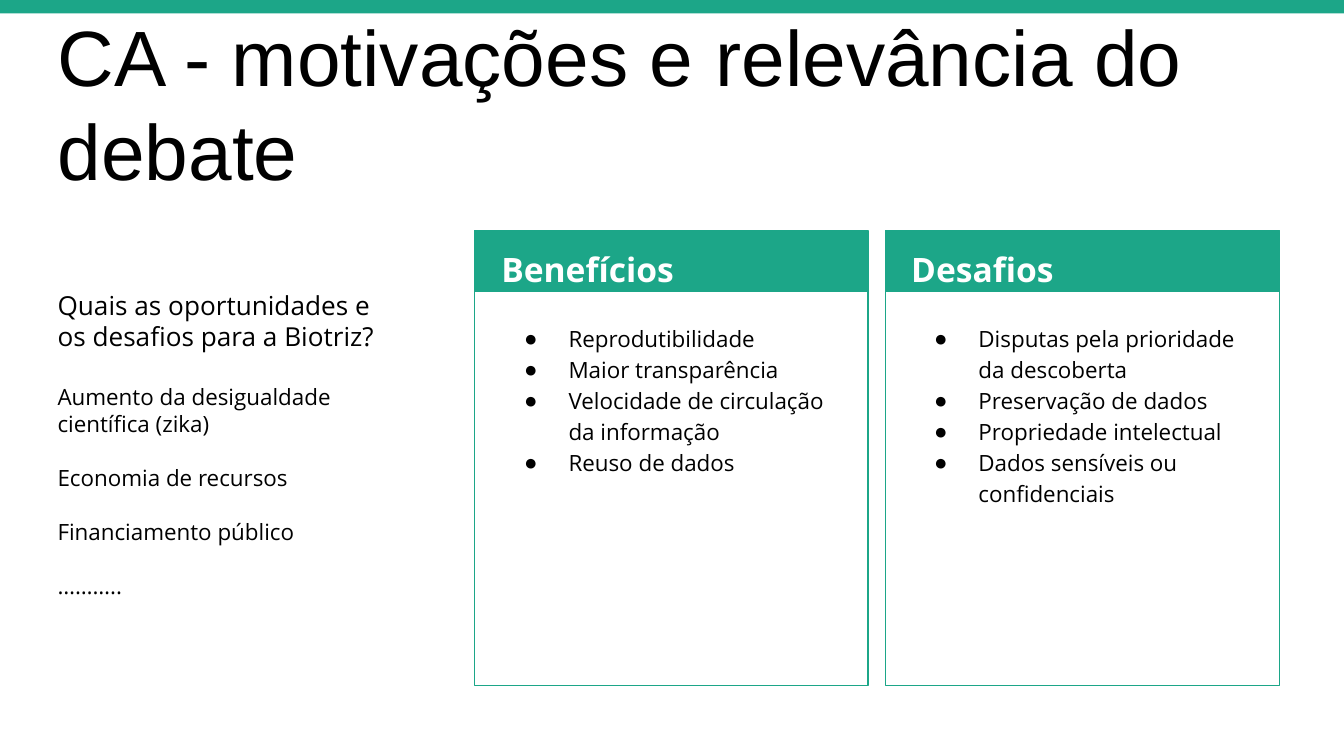
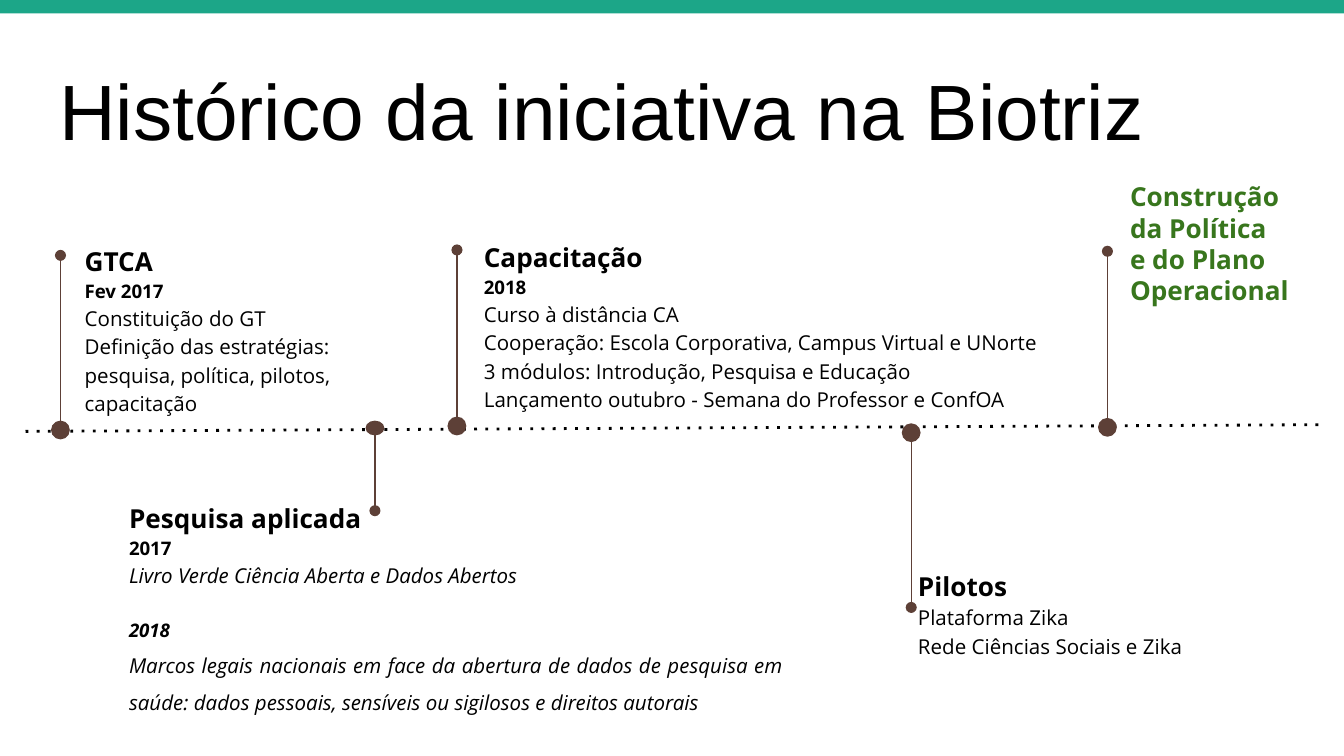
from copy import deepcopy

from lxml.etree import SubElement
from pptx import Presentation
from pptx.dml.color import RGBColor
from pptx.enum.shapes import MSO_CONNECTOR as Connector, MSO_SHAPE as Shape
from pptx.enum.text import MSO_ANCHOR as Anchor, MSO_AUTO_SIZE as AutoSize, PP_ALIGN as Align
from pptx.oxml.ns import qn
from pptx.util import Inches, Pt

GREEN, BROWN, BLACK, WHITE, DARK_GREEN = "1CA688", "5D4037", "000000", "FFFFFF", "38761D"

# Paragraph styles
TITLE = dict(size=42, font="Arial", spacing=1)
CARD_HEAD = dict(size=18, bold=True, color=WHITE)
CARD_ITEM = dict(size=12, bullet=True)
QUESTION = dict(size=14, spacing=1, after=17)
ANSWER = dict(size=12, spacing=1, after=14.5)
HEAD = dict(size=14, bold=True)
DATE = dict(size=10, bold=True)
PLAIN = dict(size=11)
GOAL = dict(size=14, bold=True, color=DARK_GREEN, spacing=1)

# Slide 1
DEBATE_TITLE = "CA - motivações e relevância do debate"
DEBATE_NOTES = [
    ("Quais as oportunidades e os desafios para a Biotriz?", QUESTION),
    ("Aumento da desigualdade científica (zika)", ANSWER),
    ("Economia de recursos", ANSWER),
    ("Financiamento público", ANSWER),
    ("………..", ANSWER),
]
CARDS = [
    ("Benefícios", ["Reprodutibilidade", "Maior transparência",
                    "Velocidade de circulação da informação", "Reuso de dados"]),
    ("Desafios", ["Disputas pela prioridade da descoberta", "Preservação de dados",
                  "Propriedade intelectual", "Dados sensíveis ou confidenciais"]),
]
CARD_LEFT, CARD_TOP, CARD_STEP = 3.53, 1.72, 3.06
CARD_WIDTH, CARD_HEIGHT, HEADER_HEIGHT = 2.93, 3.38, 0.45
CARD_TEXT_LEFT, CARD_TEXT_STEP, CARD_TEXT_WIDTH = 3.63, 3.05, 2.72

# Slide 2
HISTORY_TITLE = "Histórico da iniciativa na Biotriz"
EVENTS = [
    ((0.53, 1.69, 2.34, 1.2), [
        ("GTCA", HEAD),
        ("Fev 2017", DATE),
        ("Constituição do GT \vDefinição das estratégias: pesquisa, política, pilotos, "
         "capacitação", PLAIN),
    ]),
    ((0.86, 3.6, 5.07, 1.46), [
        ("Pesquisa aplicada", HEAD),
        ("2017", DATE),
        ("Livro Verde Ciência Aberta e Dados Abertos", dict(PLAIN, italic=True, after=15)),
        ("2018", dict(DATE, italic=True)),
        ("Marcos legais nacionais em face da abertura de dados de pesquisa em saúde: "
         "dados pessoais, sensíveis ou sigilosos e direitos autorais",
         dict(PLAIN, italic=True, spacing=1.5, align=Align.JUSTIFY)),
    ]),
    ((6.73, 4.11, 2.2, 1.2), [
        ("Pilotos", HEAD),
        ("Plataforma Zika", PLAIN),
        ("Rede Ciências Sociais e Zika", PLAIN),
    ]),
    ((3.5, 1.66, 4.67, 1.59), [
        ("Capacitação", HEAD),
        ("2018", DATE),
        ("Curso à distância CA", PLAIN),
        ("Cooperação: Escola Corporativa, Campus Virtual e UNorte", PLAIN),
        ("3 módulos: Introdução, Pesquisa e Educação", PLAIN),
        ("Lançamento outubro - Semana do Professor e ConfOA", PLAIN),
    ]),
]
GOAL_LINES = [("Construção da Política \ve do Plano Operacional", GOAL)]
# Centre of the stem, top of its dot, height of the dot, far end of the stem
STEMS = [
    (0.45, 3.13, 0.14, 1.9),
    (2.79, 3.13, 0.11, 3.8),
    (3.4, 3.1, 0.14, 1.86),
    (6.78, 3.15, 0.14, 4.52),
    (8.24, 3.11, 0.14, 1.87),
]
DOT_WIDTH = 0.14


def rgb(color):
    return RGBColor.from_string(color)


def set_bullet(para, bullet):
    properties = para._p.get_or_add_pPr()
    properties.set("marL", str(Inches(0.5) if bullet else 0))
    properties.set("indent", str(Inches(-0.33) if bullet else 0))
    if bullet:
        color = SubElement(properties, qn("a:buClr"))
        SubElement(color, qn("a:srgbClr")).set("val", BLACK)
        SubElement(properties, qn("a:buChar")).set("char", "●")
    else:
        SubElement(properties, qn("a:buNone"))


def write_line(para, text, size, font="Open Sans", color=BLACK, bold=False, italic=False,
               spacing=1.15, after=0, align=Align.LEFT, bullet=False):
    para.text = text
    para.alignment = align
    para.line_spacing = spacing
    para.space_before, para.space_after = Pt(0), Pt(after)
    set_bullet(para, bullet)
    for span in para.runs:
        span.font.name, span.font.size = font, Pt(size)
        span.font.bold, span.font.italic = bold, italic
        span.font.color.rgb = rgb(color)
    for line_break in para._p.findall(qn("a:br")):
        line_break.append(deepcopy(para.runs[0]._r.rPr))


def fill_text(box, at, lines, anchor=Anchor.TOP):
    """Place a text box or placeholder and write its (text, style) lines."""
    box.left, box.top, box.width, box.height = map(Inches, at)
    frame = box.text_frame
    frame.word_wrap, frame.auto_size = True, AutoSize.NONE
    frame.vertical_anchor = anchor
    frame.margin_left = frame.margin_right = Inches(0.1)
    frame.margin_top = frame.margin_bottom = Inches(0.1)
    for index, (text, style) in enumerate(lines):
        para = frame.add_paragraph() if index else frame.paragraphs[0]
        write_line(para, text, **style)


def bring_to_front(slide, box):
    slide.shapes._spTree.append(box._element)


def add_text(slide, at, lines, anchor=Anchor.TOP):
    fill_text(slide.shapes.add_textbox(*map(Inches, at)), at, lines, anchor)


def add_block(slide, kind, at, fill=None, line=None):
    block = slide.shapes.add_shape(kind, *map(Inches, at))
    block.shadow.inherit = False
    if fill:
        block.fill.solid()
        block.fill.fore_color.rgb = rgb(fill)
    else:
        block.fill.background()
    if line:
        block.line.color.rgb, block.line.width = rgb(line), Pt(0.75)
    else:
        block.line.fill.background()


def add_line(slide, start, end, color, width, detail, value_name, value):
    """Draw a line whose a:ln gets one more element, such as a dash or an arrowhead."""
    connector = slide.shapes.add_connector(Connector.STRAIGHT, *map(Inches, start + end))
    connector.line.color.rgb, connector.line.width = rgb(color), Pt(width)
    outline = connector._element.spPr.find(qn("a:ln"))
    SubElement(outline, qn(detail)).set(value_name, value)
    SubElement(connector._element.spPr, qn("a:effectLst"))


def add_slide(deck, title, at, anchor):
    """Add a slide with the green band, its title and four body placeholders."""
    slide = deck.slides.add_slide(deck.slide_layouts.get_by_name("Comparison"))
    add_block(slide, Shape.RECTANGLE, (0, 0, 10.02, 0.1), fill=GREEN)
    fill_text(slide.shapes.title, at, [(title, TITLE)], anchor)
    return slide


def build_debate(deck):
    slide = add_slide(deck, DEBATE_TITLE, (0.33, 0, 8.96, 1.52), Anchor.MIDDLE)
    add_text(slide, (0.33, 2.05, 2.6, 2.99), DEBATE_NOTES)
    for index, (heading, items) in enumerate(CARDS):
        left = CARD_LEFT + index * CARD_STEP
        text_left = CARD_TEXT_LEFT + index * CARD_TEXT_STEP
        add_block(slide, Shape.RECTANGLE, (left, CARD_TOP, CARD_WIDTH, CARD_HEIGHT), line=GREEN)
        add_block(slide, Shape.RECTANGLE, (left, CARD_TOP, CARD_WIDTH, HEADER_HEIGHT),
                  fill=GREEN, line=GREEN)
        head, body = (slide.placeholders[2 * index + number] for number in (1, 2))
        fill_text(head, (text_left, 1.71, CARD_TEXT_WIDTH, HEADER_HEIGHT),
                  [(heading, CARD_HEAD)])
        fill_text(body, (text_left, 2.29, CARD_TEXT_WIDTH, 2.8),
                  [(item, CARD_ITEM) for item in items])
        bring_to_front(slide, head)
        bring_to_front(slide, body)


def add_stem(slide, center, top, height, end):
    add_block(slide, Shape.OVAL, (center - DOT_WIDTH / 2, top, DOT_WIDTH, height), fill=BROWN)
    start = top if end < top else top + height
    add_line(slide, (center, start), (center, end), BROWN, 0.75, "a:tailEnd", "type", "oval")


def build_history(deck):
    slide = add_slide(deck, HISTORY_TITLE, (0.34, 0.35, 9.32, 0.91), Anchor.BOTTOM)
    add_line(slide, (0.19, 3.21), (9.85, 3.16), BLACK, 1.5, "a:prstDash", "val", "dot")
    for stem in STEMS:
        add_stem(slide, *stem)
    for number, (at, lines) in enumerate(EVENTS, start=1):
        box = slide.placeholders[number]
        fill_text(box, at, lines)
        bring_to_front(slide, box)
    add_text(slide, (8.31, 1.3, 1.53, 1.02), GOAL_LINES, Anchor.MIDDLE)


def main():
    deck = Presentation()
    deck.slide_width = Inches(10)
    deck.slide_height = deck.slide_width * 9 // 16
    build_debate(deck)
    build_history(deck)
    deck.save("out.pptx")


if __name__ == "__main__":
    main()
